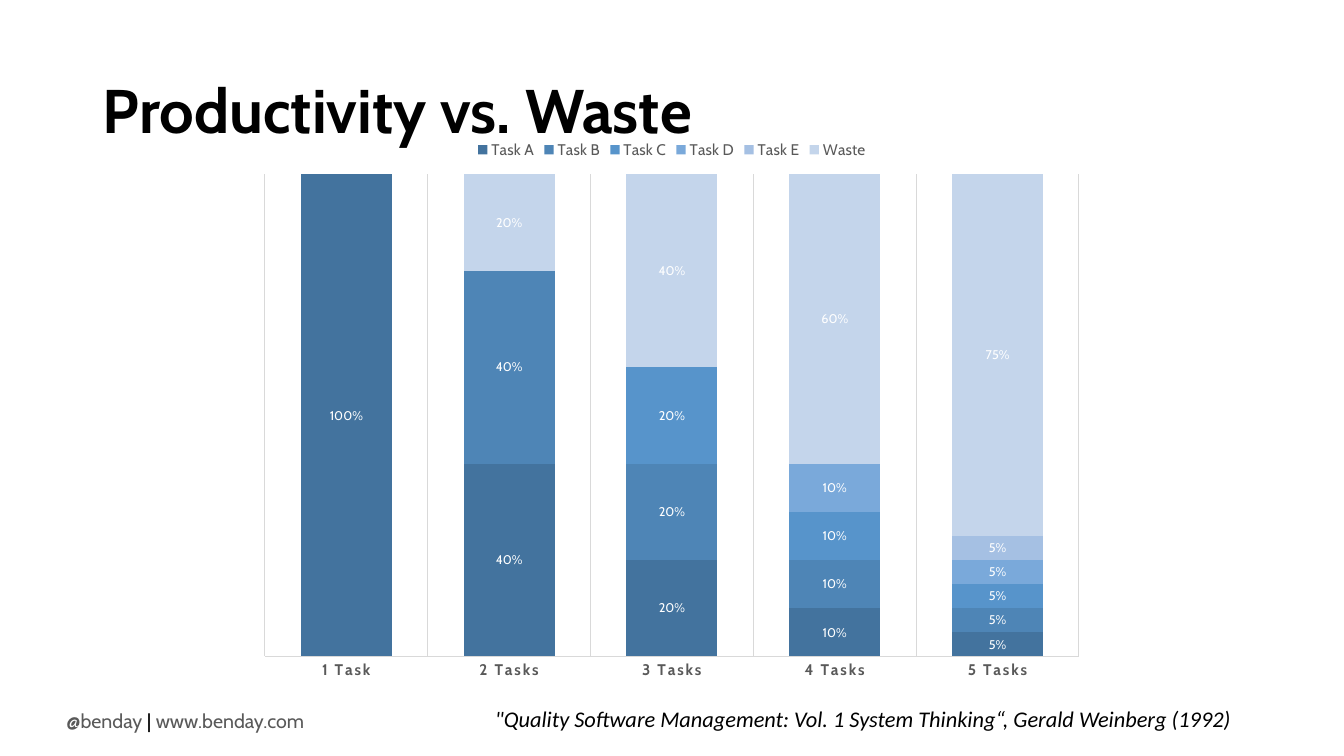
"""Build the slide on productivity lost to task switching."""
from lxml import etree
from pptx import Presentation
from pptx import util as u
from pptx.chart import data as cd
from pptx.dml import color as dc
from pptx.enum import chart as ch
from pptx.enum import text as tx
from pptx.oxml import ns


class Theme:
    """Colours, fonts and type styles."""
    ink, gray, rule, white = "000000", "595959", "D9D9D9", "FFFFFF"
    fills = ["43739E", "4E85B6", "5794CB", "7AA9DA", "A5C0E3", "C4D5EB"]
    title = dict(name="Cabin", size=u.Pt(44), bold=True, color=ink)
    foot = dict(name="Cabin", size=u.Pt(14), color=gray)
    bar = {**foot, "color": ink}
    cite = dict(name="Calibri", size=u.Pt(16), italic=True, color=ink)
    base = dict(name="Cabin", size=u.Pt(10), color=ink)
    key = dict(name="Cabin", size=u.Pt(11), color=gray)
    axis = {**key, "bold": True}
    label = dict(name="Cabin", size=u.Pt(9), color=white)


class Deck:
    """Holds the theme and the current slide."""

    def __init__(self, theme):
        """Open a wide deck with one title slide."""
        self.theme = theme
        self.prs = Presentation()
        self.prs.slide_width = u.Inches(13.33)
        self.prs.slide_height = u.Inches(7.5)
        self.slide = self.prs.slides.add_slide(self.prs.slide_layouts[5])

    def style(self, font, form):
        """Apply a dict of format values to a font."""
        for name, value in form.items():
            if name == "color":
                font.color.rgb = dc.RGBColor.from_string(value)
            else:
                setattr(font, name, value)

    def line(self, form):
        """Draw a thin rule on a chart part."""
        form.line.color.rgb = dc.RGBColor.from_string(self.theme.rule)
        form.line.width = u.Pt(0.75)

    def title(self, words, box):
        """Fill and place the title."""
        shape = self.slide.shapes.title
        shape.left, shape.top, shape.width, shape.height = map(u.Inches, box)
        frame = shape.text_frame
        frame.text = words
        frame.vertical_anchor = tx.MSO_ANCHOR.MIDDLE
        para = frame.paragraphs[0]
        para.alignment = tx.PP_ALIGN.LEFT
        para.line_spacing = 0.9
        self.style(para.runs[0].font, self.theme.title)

    def text(self, runs, box):
        """Add one line of styled runs."""
        frame = self.slide.shapes.add_textbox(*map(u.Inches, box)).text_frame
        frame.word_wrap = False
        frame.auto_size = tx.MSO_AUTO_SIZE.SHAPE_TO_FIT_TEXT
        for words, form in runs:
            run = frame.paragraphs[0].add_run()
            run.text = words
            self.style(run.font, form)

    def tags(self, part):
        """Label a series, leaving out its zero values."""
        tags = part.data_labels
        form = dict(show_value=True, number_format="0%",
                    number_format_is_linked=False,
                    position=ch.XL_LABEL_POSITION.CENTER)
        for name, value in form.items():
            setattr(tags, name, value)
        self.style(tags.font, self.theme.label)
        zeros = [spot for spot, value in enumerate(part.values) if not value]
        for place, spot in enumerate(zeros):
            label = etree.Element(ns.qn("c:dLbl"))
            etree.SubElement(label, ns.qn("c:idx"), val=str(spot))
            etree.SubElement(label, ns.qn("c:delete"), val="1")
            tags._element.insert(place, label)

    def stack(self, cats, rows, box):
        """Add a full-height stacked column chart."""
        data = cd.CategoryChartData(number_format="0%")
        data.categories = cats
        for name, vals in rows.items():
            data.add_series(name, vals)
        kind = ch.XL_CHART_TYPE.COLUMN_STACKED_100
        chart = self.slide.shapes.add_chart(kind, *map(u.Inches, box), data).chart
        self.style(chart.font, self.theme.base)
        chart.has_title = False
        chart.has_legend = True
        chart.legend.position = ch.XL_LEGEND_POSITION.TOP
        chart.legend.include_in_layout = False
        self.style(chart.legend.font, self.theme.key)
        chart.value_axis.visible = False
        chart.value_axis.has_major_gridlines = False
        axis = chart.category_axis
        axis.major_tick_mark = ch.XL_TICK_MARK.NONE
        axis.has_major_gridlines = True
        self.line(axis.major_gridlines.format)
        self.line(axis.format)
        self.style(axis.tick_labels.font, self.theme.axis)
        axis._element.find(".//" + ns.qn("a:defRPr")).set("spc", "120")
        plot = chart.plots[0]
        plot.gap_width, plot.overlap = 79, 100
        plot.vary_by_categories = False
        for part, fill in zip(plot.series, self.theme.fills):
            part.format.fill.solid()
            part.format.fill.fore_color.rgb = dc.RGBColor.from_string(fill)
            self.tags(part)


def main():
    """Compose and save the slide."""
    theme = Theme()
    deck = Deck(theme)
    deck.text([("@benday", theme.foot), (" | ", theme.bar),
               ("www.benday.com", theme.foot)], (0.56, 6.98, 2.69, 0.34))
    deck.title("Productivity vs. Waste", (0.92, 0.4, 11.5, 1.45))
    deck.text([('"Quality Software Management: Vol. 1 System Thinking“, '
                "Gerald Weinberg (1992)", theme.cite)], (4.81, 6.95, 7.6, 0.37))
    share = [1, 0.4, 0.2, 0.1, 0.05]
    cats = [f"{n} Task{'s' if n > 1 else ''}" for n in range(1, 6)]
    rows = {f"Task {name}": [0] * skip + share[skip:]
            for skip, name in enumerate("ABCDE")}
    rows["Waste"] = [0, 0.2, 0.4, 0.6, 0.75]
    deck.stack(cats, rows, (2.46, 1.28, 8.41, 5.57))
    deck.prs.save("out.pptx")


if __name__ == "__main__":
    main()
